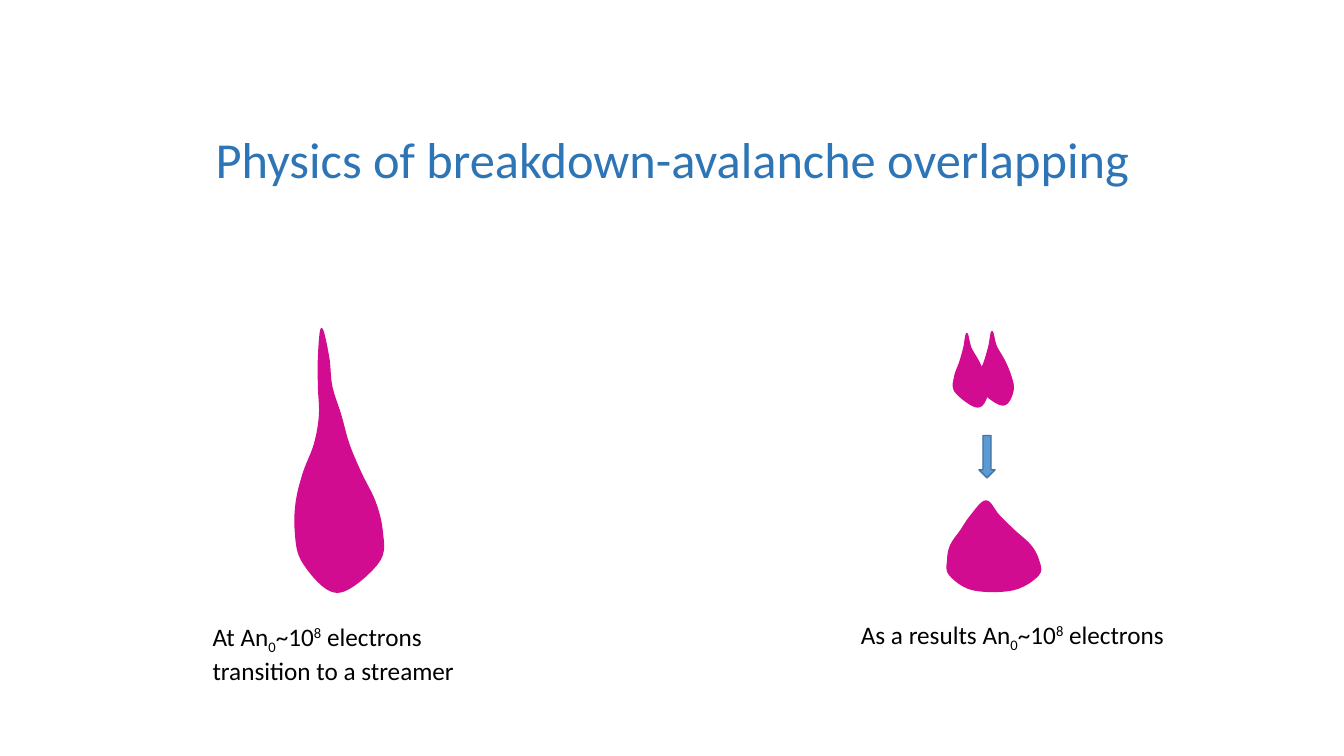
from dataclasses import dataclass

from pptx import Presentation
from pptx.dml.color import RGBColor
from pptx.enum.shapes import MSO_SHAPE
from pptx.enum.text import MSO_ANCHOR, MSO_AUTO_SIZE, PP_ALIGN
from pptx.util import Inches, Pt

COLORS = {
    "title": "2E75B6",
    "text": "000000",
    "avalanche": "D20C90",
    "arrow": "5B9BD5",
    "arrow_line": "43739E",
}
SUBSCRIPT, SUPERSCRIPT = -25, 30
CURVE_STEPS = 6


@dataclass
class Avalanche:
    """Spreads are distances from the tip's axis, at equal steps from tip to base."""
    height: float
    left_spreads: tuple
    right_spreads: tuple


SMALL_AVALANCHE = Avalanche(
    height=0.71,
    left_spreads=(0, 0.03, 0.07, 0.12, 0.12, -0.05),
    right_spreads=(0, 0.04, 0.12, 0.18, 0.21, 0.15),
)
STREAMER = Avalanche(
    height=2.58,
    left_spreads=(0, 0.03, 0.03, 0.02, 0.07, 0.18, 0.25, 0.26, 0.2, -0.05),
    right_spreads=(0, 0.07, 0.1, 0.19, 0.27, 0.39, 0.53, 0.6, 0.58, 0.27),
)
MERGED_AVALANCHE = Avalanche(
    height=0.88,
    left_spreads=(0, 0.15, 0.25, 0.35, 0.38, 0.36, 0.13),
    right_spreads=(0, 0.13, 0.28, 0.44, 0.52, 0.52, 0.27),
)


def set_attributes(target, values):
    for name, value in values.items():
        setattr(target, name, value)


def box(left, top, width, height):
    return [Inches(value) for value in (left, top, width, height)]


def format_font(font, size, color):
    set_attributes(font, {"name": "Calibri", "size": Pt(size)})
    font.color.rgb = RGBColor.from_string(COLORS[color])


def format_shape(shape, fill, line):
    shape.shadow.inherit = False
    shape.fill.solid()
    shape.fill.fore_color.rgb = RGBColor.from_string(COLORS[fill])
    shape.line.color.rgb = RGBColor.from_string(COLORS[line])
    shape.line.width = Pt(1)


def set_title(slide, text):
    title = slide.shapes.title
    left, top, width, height = box(1.67, 0.76, 10, 1.17)
    set_attributes(title, {"left": left, "top": top, "width": width, "height": height})
    title.text_frame.vertical_anchor = MSO_ANCHOR.BOTTOM
    paragraph = title.text_frame.paragraphs[0]
    set_attributes(paragraph, {"alignment": PP_ALIGN.CENTER, "line_spacing": 0.9})
    run = paragraph.add_run()
    run.text = text
    format_font(run.font, 36, "title")
    # The subtitle stays empty on this slide
    subtitle = slide.placeholders[1].element
    subtitle.getparent().remove(subtitle)


def avalanche_outline(avalanche, tip_x, tip_y):
    """Go down the right flank, across the base and up the left flank."""
    step = avalanche.height / (len(avalanche.left_spreads) - 1)
    right = [(tip_x + spread, tip_y + level * step)
             for level, spread in enumerate(avalanche.right_spreads)]
    left = [(tip_x - spread, tip_y + level * step)
            for level, spread in enumerate(avalanche.left_spreads)]
    return right + left[:0:-1]


def curve_value(before, start, end, after, t):
    """Catmull-Rom spline between start and end, for t from 0 to 1."""
    return start + t / 2 * (
        end - before
        + t * (2 * before - 5 * start + 4 * end - after)
        + t * t * (3 * (start - end) + after - before)
    )


def smooth_outline(points):
    """Round a closed outline by adding curve points between its corners."""
    count = len(points)
    smooth = []
    for index in range(count):
        neighbours = [points[(index + offset) % count] for offset in (-1, 0, 1, 2)]
        for step in range(CURVE_STEPS):
            smooth.append([curve_value(*values, step / CURVE_STEPS)
                           for values in zip(*neighbours)])
    return smooth


def add_avalanche(slide, avalanche, tip_x, tip_y):
    outline = smooth_outline(avalanche_outline(avalanche, tip_x, tip_y))
    points = [(Inches(x), Inches(y)) for x, y in outline]
    builder = slide.shapes.build_freeform(*points[0])
    builder.add_line_segments(points[1:], close=True)
    format_shape(builder.convert_to_shape(), "avalanche", "avalanche")


def add_down_arrow(slide, position):
    arrow = slide.shapes.add_shape(MSO_SHAPE.DOWN_ARROW, *box(*position))
    format_shape(arrow, "arrow", "arrow_line")


def add_caption(slide, position, pieces, wrap):
    frame = slide.shapes.add_textbox(*box(*position)).text_frame
    set_attributes(frame, {"word_wrap": wrap, "auto_size": MSO_AUTO_SIZE.SHAPE_TO_FIT_TEXT})
    for text, baseline in pieces:
        run = frame.paragraphs[0].add_run()
        run.text = text
        format_font(run.font, 18, "text")
        if baseline:
            run._r.get_or_add_rPr().set("baseline", str(baseline * 1000))


def electron_count(before, after):
    return [(before, 0), ("0", SUBSCRIPT), ("~10", 0), ("8", SUPERSCRIPT), (after, 0)]


def main():
    presentation = Presentation()
    set_attributes(presentation, {"slide_width": Inches(13.33), "slide_height": Inches(7.5)})
    slide = presentation.slides.add_slide(presentation.slide_layouts[0])
    set_title(slide, "Physics of breakdown-avalanche overlapping")

    # Two overlapping avalanches
    for tip_x, tip_y in ((9.59, 3.31), (9.84, 3.29)):
        add_avalanche(slide, SMALL_AVALANCHE, tip_x, tip_y)

    # Single avalanche turning into a streamer
    add_avalanche(slide, STREAMER, 3.19, 3.26)
    add_caption(slide, (2.01, 6.11, 3.2, 1.01),
                electron_count("At An", " electrons transition to a streamer"), True)

    # Merged avalanche
    add_down_arrow(slide, (9.71, 4.32, 0.16, 0.42))
    add_avalanche(slide, MERGED_AVALANCHE, 9.78, 4.97)
    add_caption(slide, (8.44, 6.09, 3.26, 0.4),
                electron_count("As a results An", " electrons"), False)

    presentation.save("out.pptx")


if __name__ == "__main__":
    main()
